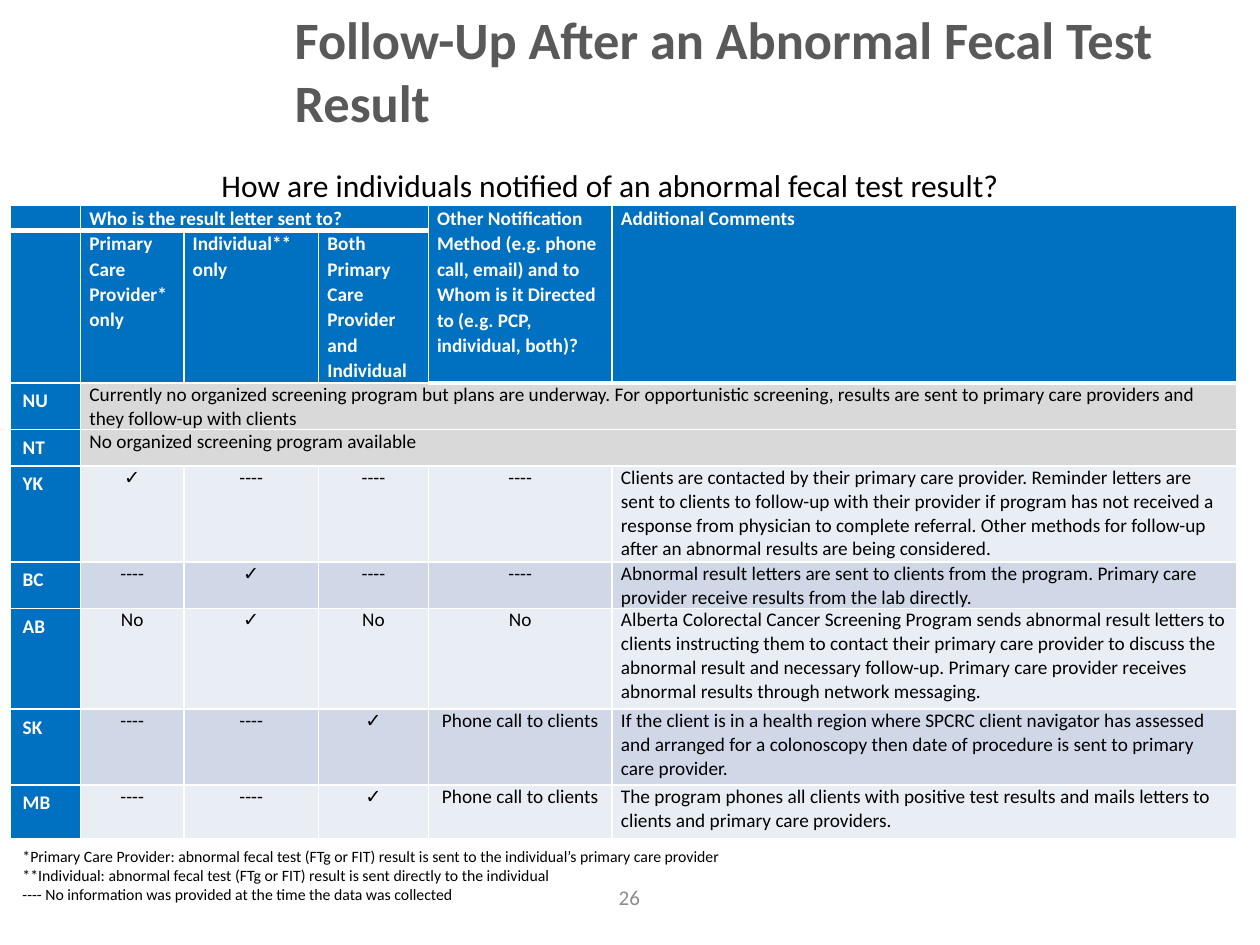
from lxml.etree import SubElement
from pptx import Presentation
from pptx.dml.color import RGBColor
from pptx.enum.text import MSO_ANCHOR, PP_ALIGN
from pptx.oxml import parse_xml
from pptx.oxml.ns import nsdecls, qn
from pptx.util import Inches, Pt

COLORS = {
    "title": "595959", "text": "000000", "number": "8C8C8C", "white": "FFFFFF",
    "header": "0070C0", "gray": "D9D9D9", "light": "E9EDF4", "dark": "D0D8E8",
}
FONT = "Calibri"
COLS = [0.56, 0.82, 1.07, 0.87, 1.46, 4.96]
ROWS = [0.2, 1.21, 0.37, 0.29, 0.76, 0.37, 0.8, 0.6, 0.43]
CHECK, NONE, PHONE = "✓", "----", "Phone call to clients"

HEADERS = [
    ["", "Who is the result letter sent to?", "", "",
     "Other Notification Method (e.g. phone call, email) and to Whom is it "
     "Directed to (e.g. PCP, individual, both)?", "Additional Comments"],
    ["", "Primary Care Provider* only", "Individual** only",
     "Both Primary Care Provider and Individual", "", ""],
]
NO_PROGRAM = [
    ["NU", "Currently no organized screening program but plans are underway. "
     "For opportunistic screening, results are sent to primary care providers "
     "and they follow-up with clients"],
    ["NT", "No organized screening program available"],
]
PROGRAMS = [
    ["YK", CHECK, NONE, NONE, NONE,
     "Clients are contacted by their primary care provider. Reminder letters "
     "are sent to clients to follow-up with their provider if program has not "
     "received a response from physician to complete referral. Other methods "
     "for follow-up after an abnormal results are being considered."],
    ["BC", NONE, CHECK, NONE, NONE,
     "Abnormal result letters are sent to clients from the program. Primary "
     "care provider receive results from the lab directly."],
    ["AB", "No", CHECK, "No", "No",
     "Alberta Colorectal Cancer Screening Program sends abnormal result "
     "letters to clients instructing them to contact their primary care "
     "provider to discuss the abnormal result and necessary follow-up. Primary "
     "care provider receives abnormal results through network messaging."],
    ["SK", NONE, NONE, CHECK, PHONE,
     "If the client is in a health region where SPCRC client navigator has "
     "assessed and arranged for a colonoscopy then date of procedure is sent "
     "to primary care provider."],
    ["MB", NONE, NONE, CHECK, PHONE,
     "The program phones all clients with positive test results and mails "
     "letters to clients and primary care providers."],
]
FOOTNOTES = [
    "*Primary Care Provider: abnormal fecal test (FTg or FIT) result is sent to "
    "the individual’s primary care provider",
    "**Individual: abnormal fecal test (FTg or FIT) result is sent directly to "
    "the individual",
    "---- No information was provided at the time the data was collected",
]


def rgb(name):
    return RGBColor.from_string(COLORS[name])


def format_runs(p, size, color, bold=False):
    for r in p.runs:
        r.font.name, r.font.size, r.font.bold = FONT, Pt(size), bold
        r.font.color.rgb = rgb(color)


def add_text(slide, box, lines, size, color, bold=False, align=PP_ALIGN.LEFT,
             anchor=MSO_ANCHOR.TOP):
    tf = slide.shapes.add_textbox(*map(Inches, box)).text_frame
    tf.word_wrap, tf.vertical_anchor = True, anchor
    tf.text = "\n".join(lines)
    for p in tf.paragraphs:
        p.alignment = align
        format_runs(p, size, color, bold)


def set_borders(cell, bottom):
    """Draw white edges, the lower one as wide as given in points."""
    tcPr = cell._tc.get_or_add_tcPr()
    for i, (side, width) in enumerate(zip("LRTB", (1, 1, 1, bottom))):
        tcPr.insert(i, parse_xml(
            f'<a:ln{side} {nsdecls("a")} w="{Pt(width)}"><a:solidFill>'
            f'<a:srgbClr val="{COLORS["white"]}"/></a:solidFill></a:ln{side}>'))


def set_cell(cell, text, fill, color="text", bold=False, align=PP_ALIGN.LEFT,
             spacing=None, margins=(0.07, 0), bottom=1):
    cell.fill.solid()
    cell.fill.fore_color.rgb = rgb(fill)
    cell.margin_left = cell.margin_right = Inches(margins[0])
    cell.margin_top = cell.margin_bottom = Inches(margins[1])
    set_borders(cell, bottom)
    p = cell.text_frame.paragraphs[0]
    if text:
        p.text = text
        p.alignment, p.line_spacing = align, spacing
        format_runs(p, 11, color, bold)
    else:  # an empty cell must not stretch its row
        SubElement(p._p, qn("a:endParaRPr"), sz="1100")


def add_results_table(slide):
    table = slide.shapes.add_table(
        len(ROWS), len(COLS), Inches(0.08), Inches(1.63),
        Inches(sum(COLS)), Inches(sum(ROWS))).table
    table.horz_banding = False
    for col, width in zip(table.columns, COLS):
        col.width = Inches(width)
    for row, height in zip(table.rows, ROWS):
        row.height = Inches(height)

    for i, texts in enumerate(HEADERS):
        for j, text in enumerate(texts):
            set_cell(table.cell(i, j), text, "header", "white", True,
                     spacing=1.07, bottom=3 if i == 0 or j > 3 else 1)
    for i, texts in enumerate(NO_PROGRAM + PROGRAMS, len(HEADERS)):
        set_cell(table.cell(i, 0), texts[0], "header", "white", True,
                 margins=(0.1, 0.05))
        merged = len(texts) == 2
        fill = "gray" if merged else ("dark" if i % 2 else "light")
        for j in range(1, len(COLS)):
            text = texts[j] if j < len(texts) else ""
            centered = not merged and j < len(COLS) - 1
            set_cell(table.cell(i, j), text, fill, bold=text == CHECK,
                     align=PP_ALIGN.CENTER if centered else PP_ALIGN.LEFT)
        if merged:
            table.cell(i, 1).merge(table.cell(i, 5))
    table.cell(0, 1).merge(table.cell(0, 3))
    for j in (4, 5):
        table.cell(0, j).merge(table.cell(1, j))


def main():
    prs = Presentation()
    prs.slide_width, prs.slide_height = Inches(10), Inches(7.5)
    slide = prs.slides.add_slide(prs.slide_layouts[6])
    add_text(slide, (2.24, 0.21, 7.26, 0.69),
             ["Follow-Up After an Abnormal Fecal Test Result"], 30, "title",
             bold=True, anchor=MSO_ANCHOR.MIDDLE)
    add_results_table(slide)
    add_text(slide, (1.66, 1.27, 8.34, 0.4),
             ["How are individuals notified of an abnormal fecal test result?"],
             18, "text")
    add_text(slide, (0.08, 6.67, 9.61, 0.56), FOOTNOTES, 9, "text")
    add_text(slide, (3.83, 6.92, 2.33, 0.4), ["26"], 12, "number",
             align=PP_ALIGN.CENTER, anchor=MSO_ANCHOR.MIDDLE)
    prs.save("out.pptx")


if __name__ == "__main__":
    main()
